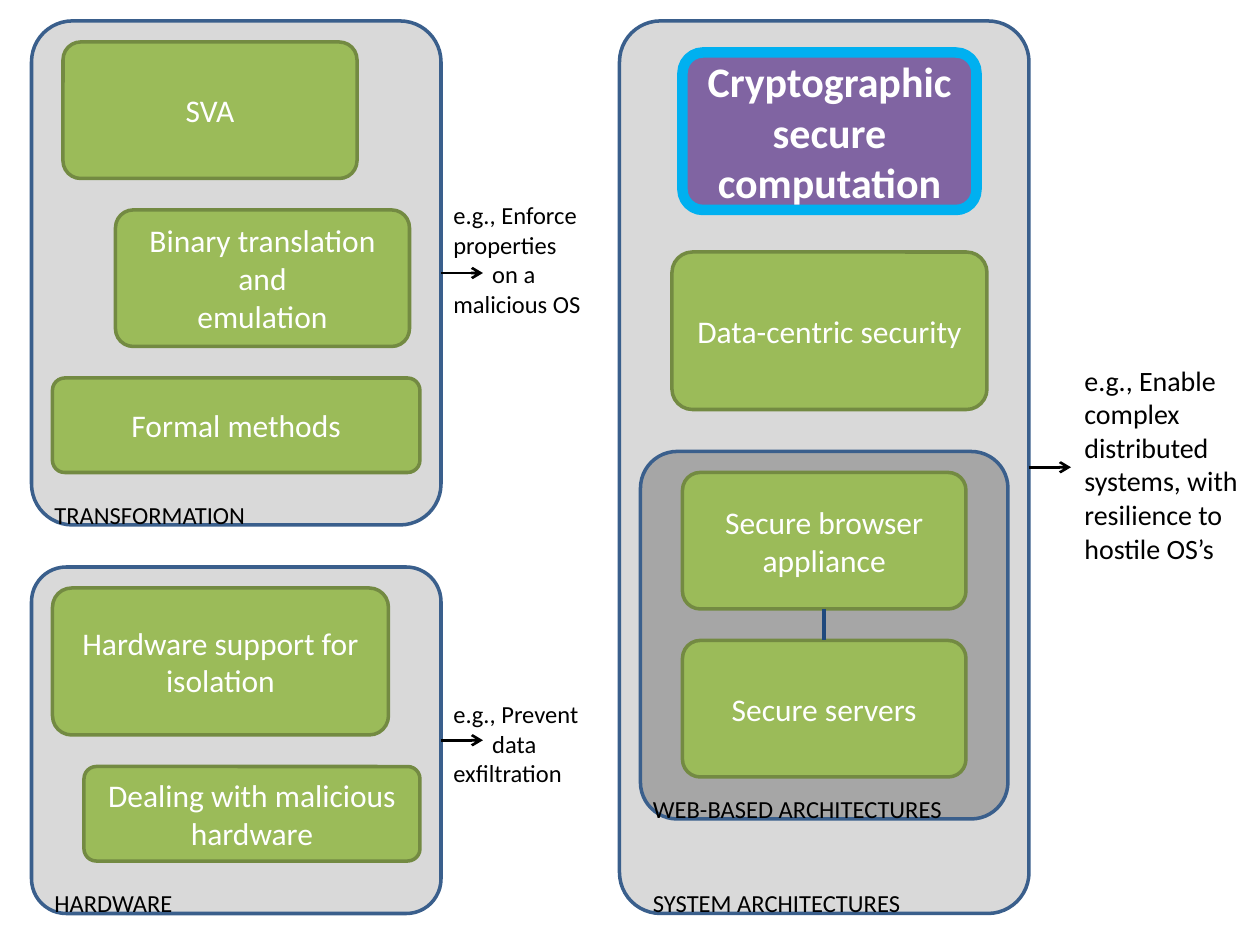
from dataclasses import dataclass

from lxml.etree import SubElement
from pptx import Presentation
from pptx.dml.color import RGBColor
from pptx.enum.shapes import MSO_CONNECTOR, MSO_SHAPE
from pptx.enum.text import MSO_ANCHOR, PP_ALIGN
from pptx.oxml.ns import qn
from pptx.util import Pt

PX = 7620
TOP, LEFT, BOTTOM, RIGHT = range(4)


@dataclass(frozen=True)
class Theme:
    font: str = "Calibri"
    text: str = "000000"
    card_text: str = "FFFFFF"
    panel: str = "D9D9D9"
    inner_panel: str = "A6A6A6"
    panel_line: str = "3A5F8C"
    card: str = "9BBB59"
    card_line: str = "738A42"
    focus: str = "8064A2"
    focus_line: str = "00B0F0"
    link: str = "1F497D"
    label_size: int = 14
    card_size: int = 18
    focus_size: int = 24
    outline: float = 2
    focus_outline: float = 6
    arrow_width: float = 1.5


THEME = Theme()

PANELS = {
    "TRANSFORMATION": ((30, 20, 390, 480), THEME.panel, (40, 470, 240)),
    "HARDWARE": ((30, 540, 390, 330), THEME.panel, (40, 840, 240)),
    "SYSTEM ARCHITECTURES": ((590, 20, 390, 850), THEME.panel, (610, 840, 350)),
    "WEB-BASED ARCHITECTURES": ((610, 430, 350, 350), THEME.inner_panel, (610, 750, 350)),
}
CARDS = {
    "SVA": (60, 40, 280, 130),
    "Binary translation and\vemulation": (110, 200, 280, 130),
    "Formal methods": (50, 360, 350, 90),
    "Hardware support for isolation": (50, 560, 320, 140),
    "Dealing with malicious hardware": (80, 730, 320, 90),
    "Cryptographic secure computation": (650, 50, 280, 150),
    "Data-centric security": (640, 240, 300, 150),
    "Secure browser appliance": (650, 450, 270, 130),
    "Secure servers": (650, 610, 270, 130),
}
FOCUS = "Cryptographic secure computation"
LINK = ("Secure browser appliance", "Secure servers")
NOTES = [
    ("TRANSFORMATION", (420, 185, 170, 125), 14,
     ["e.g., Enforce properties", "on a malicious OS"]),
    ("HARDWARE", (420, 660, 170, 97), 14,
     ["e.g., Prevent", "data\vexfiltration"]),
    ("SYSTEM ARCHITECTURES", (1021, 340, 179, 206), 16,
     ["e.g., Enable complex distributed systems, with resilience to hostile OS’s"]),
]
LABEL_HEIGHT = 41
ARROW_LENGTH = 40
NOTE_INDENT = 37


def emu(box):
    return [v * PX for v in box]


def rgb(color):
    return RGBColor.from_string(color)


def write(tf, lines, size, color, align=PP_ALIGN.LEFT, bold=False):
    tf.word_wrap = True
    tf.text = "\n".join(lines)
    for p in tf.paragraphs:
        p.alignment = align
        p.font.name = THEME.font
        p.font.size = Pt(size)
        p.font.bold = bold
        p.font.color.rgb = rgb(color)


def add_box(shapes, box, radius, fill, line, width):
    sp = shapes.add_shape(MSO_SHAPE.ROUNDED_RECTANGLE, *emu(box))
    sp.adjustments[0] = radius
    sp.shadow.inherit = False
    sp.fill.solid()
    sp.fill.fore_color.rgb = rgb(fill)
    sp.line.color.rgb = rgb(line)
    sp.line.width = Pt(width)
    return sp


def add_panel(shapes, name, box, fill, label):
    sp = add_box(shapes, box, 0.1, fill, THEME.panel_line, THEME.outline)
    tf = shapes.add_textbox(*emu((*label, LABEL_HEIGHT))).text_frame
    write(tf, [name], THEME.label_size, THEME.text)
    return sp


def add_card(shapes, text, box):
    focus = text == FOCUS
    if focus:
        look = (THEME.focus, THEME.focus_line, THEME.focus_outline)
    else:
        look = (THEME.card, THEME.card_line, THEME.outline)
    sp = add_box(shapes, box, 0.13, *look)
    sp.text_frame.vertical_anchor = MSO_ANCHOR.MIDDLE
    size = THEME.focus_size if focus else THEME.card_size
    write(sp.text_frame, [text], size, THEME.card_text, PP_ALIGN.CENTER, focus)
    return sp


def add_line(shapes, ends, color, width):
    cx = shapes.add_connector(MSO_CONNECTOR.STRAIGHT, *emu(ends))
    cx.line.color.rgb = rgb(color)
    cx.line.width = Pt(width)
    SubElement(cx._element.spPr, qn("a:effectLst"))
    return cx


def add_note(shapes, panel, box, size, lines):
    x, y, w, h = PANELS[panel][0]
    mid = y + h // 2
    return_x = x + w
    arrow = add_line(shapes, (return_x, mid, return_x + ARROW_LENGTH, mid),
                     THEME.text, THEME.arrow_width)
    SubElement(arrow.line._get_or_add_ln(), qn("a:tailEnd"), type="arrow")
    tf = shapes.add_textbox(*emu(box)).text_frame
    write(tf, lines, size, THEME.text)
    for p in tf.paragraphs[1:]:
        p._p.get_or_add_pPr().set("indent", str(NOTE_INDENT * PX))
    return arrow


def main():
    prs = Presentation()
    prs.slide_width, prs.slide_height = emu((1200, 900))
    shapes = prs.slides.add_slide(prs.slide_layouts[6]).shapes

    panels = {name: add_panel(shapes, name, *parts) for name, parts in PANELS.items()}
    cards = {text: add_card(shapes, text, box) for text, box in CARDS.items()}

    upper, lower = LINK
    x, y, w, h = CARDS[upper]
    mid = x + w // 2
    link = add_line(shapes, (mid, y + h, mid, CARDS[lower][1]), THEME.link, THEME.outline)
    link.begin_connect(cards[upper], BOTTOM)
    link.end_connect(cards[lower], TOP)

    for panel, box, size, lines in NOTES:
        arrow = add_note(shapes, panel, box, size, lines)
        arrow.begin_connect(panels[panel], RIGHT)

    prs.save("out.pptx")


if __name__ == "__main__":
    main()
